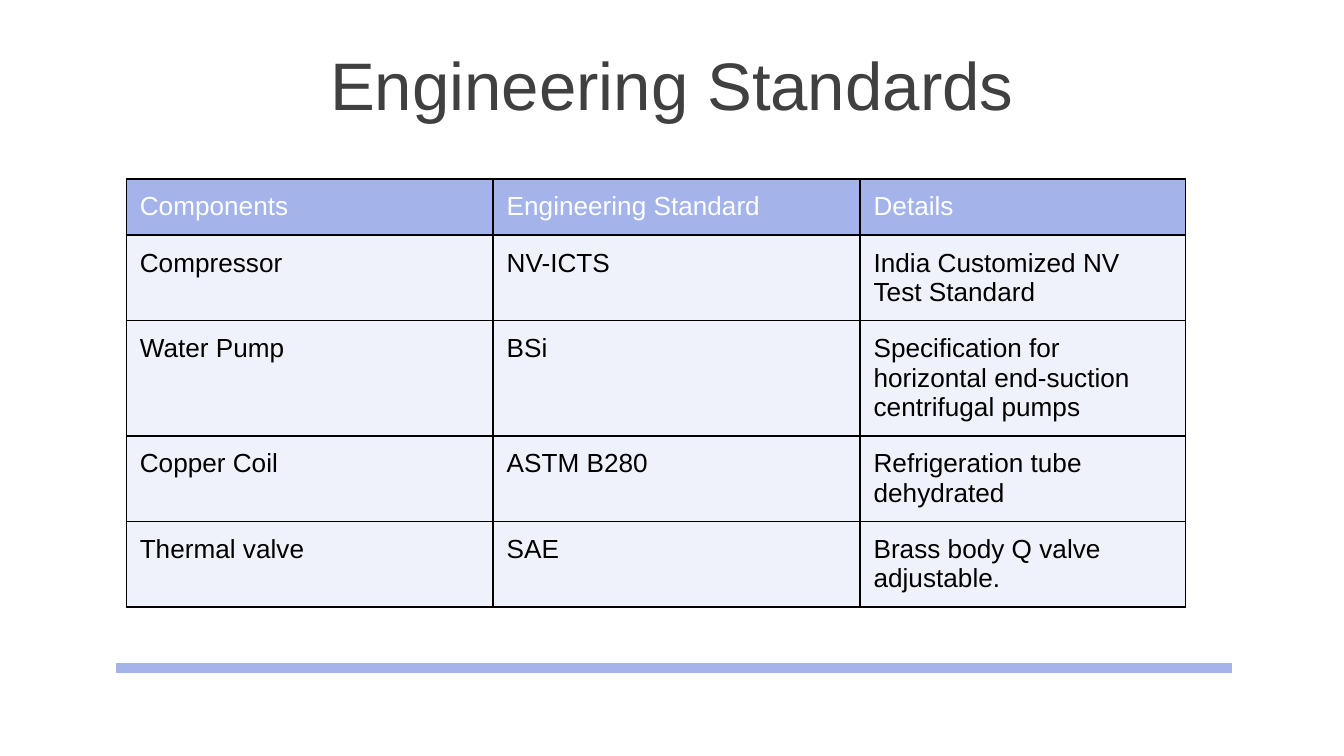
from lxml import etree
from pptx import Presentation
from pptx.dml.color import RGBColor
from pptx.enum.shapes import MSO_CONNECTOR
from pptx.enum.text import MSO_ANCHOR, PP_ALIGN
from pptx.oxml.ns import qn
from pptx.util import Inches, Pt

STRAIGHT = MSO_CONNECTOR.STRAIGHT
MIDDLE = MSO_ANCHOR.MIDDLE
CENTER = PP_ALIGN.CENTER

PERIWINKLE = RGBColor(0xA4, 0xB4, 0xEA)
PALE_BLUE = RGBColor(0xF0, 0xF2, 0xFB)
DARK_GRAY = RGBColor(0x40, 0x40, 0x40)
WHITE = RGBColor(0xFF, 0xFF, 0xFF)
BLACK = RGBColor(0, 0, 0)

FONT = "Arial"
CELL_MARGIN = Inches(0.1)
COLUMN_WIDTHS = [2.73, 2.73, 2.42]

# Each row: minimum height in inches, then its cells
ROWS = [
    (0.4, ["Components", "Engineering Standard", "Details"]),
    (0.61, ["Compressor", "NV-ICTS", "India Customized NV Test Standard"]),
    (0.64, ["Water Pump", "BSi",
            "Specification for horizontal end-suction centrifugal pumps"]),
    (0.5, ["Copper Coil", "ASTM B280", "Refrigeration tube\ndehydrated"]),
    (0.61, ["Thermal valve", "SAE", "Brass body Q valve\nadjustable."]),
]


def add_borders(cell, color, width):
    properties = cell._tc.get_or_add_tcPr()
    for side in ("a:lnL", "a:lnR", "a:lnT", "a:lnB"):
        line = etree.SubElement(properties, qn(side), w=str(width))
        fill = etree.SubElement(line, qn("a:solidFill"))
        etree.SubElement(fill, qn("a:srgbClr"), val=str(color))


presentation = Presentation()
presentation.slide_width = Inches(10)
presentation.slide_height = presentation.slide_width * 9 // 16
title_only = presentation.slide_layouts[5]
slide = presentation.slides.add_slide(title_only)

# Title
title = slide.shapes.title
title.left, title.top = 0, Inches(0.31)
title.width, title.height = presentation.slide_width, Inches(0.63)
title.text_frame.text = "Engineering Standards"
title.text_frame.vertical_anchor = MIDDLE
paragraph = title.text_frame.paragraphs[0]
paragraph.alignment = CENTER
for run in paragraph.runs:
    run.font.name = FONT
    run.font.size = Pt(36)
    run.font.color.rgb = DARK_GRAY

# Footer rule
rule_y = Inches(4.97)
footer_rule = slide.shapes.add_connector(
    STRAIGHT, Inches(0.86), rule_y, Inches(9.17), rule_y)
footer_rule.line.color.rgb = PERIWINKLE
footer_rule.line.width = Pt(5)
etree.SubElement(footer_rule._element.spPr, qn("a:effectLst"))

# Standards table: rows grow to fit their text
table_frame = slide.shapes.add_table(
    len(ROWS), len(COLUMN_WIDTHS), Inches(0.94), Inches(1.33),
    Inches(sum(COLUMN_WIDTHS)), Inches(3.33))
table = table_frame.table
table.horz_banding = False
for column, width in zip(table.columns, COLUMN_WIDTHS):
    column.width = Inches(width)

for row_index, (height, texts) in enumerate(ROWS):
    is_header = row_index == 0
    table.rows[row_index].height = Inches(height)
    for column_index, text in enumerate(texts):
        cell = table.cell(row_index, column_index)
        add_borders(cell, BLACK, Pt(1))
        cell.fill.solid()
        cell.fill.fore_color.rgb = PERIWINKLE if is_header else PALE_BLUE
        cell.margin_left = cell.margin_right = CELL_MARGIN
        cell.margin_top = cell.margin_bottom = CELL_MARGIN
        cell.text_frame.text = text
        for paragraph in cell.text_frame.paragraphs:
            for run in paragraph.runs:
                run.font.name = FONT
                run.font.size = Pt(14)
                run.font.bold = False
                run.font.color.rgb = WHITE if is_header else BLACK
table_frame.height = Inches(3.33)

presentation.save("out.pptx")
